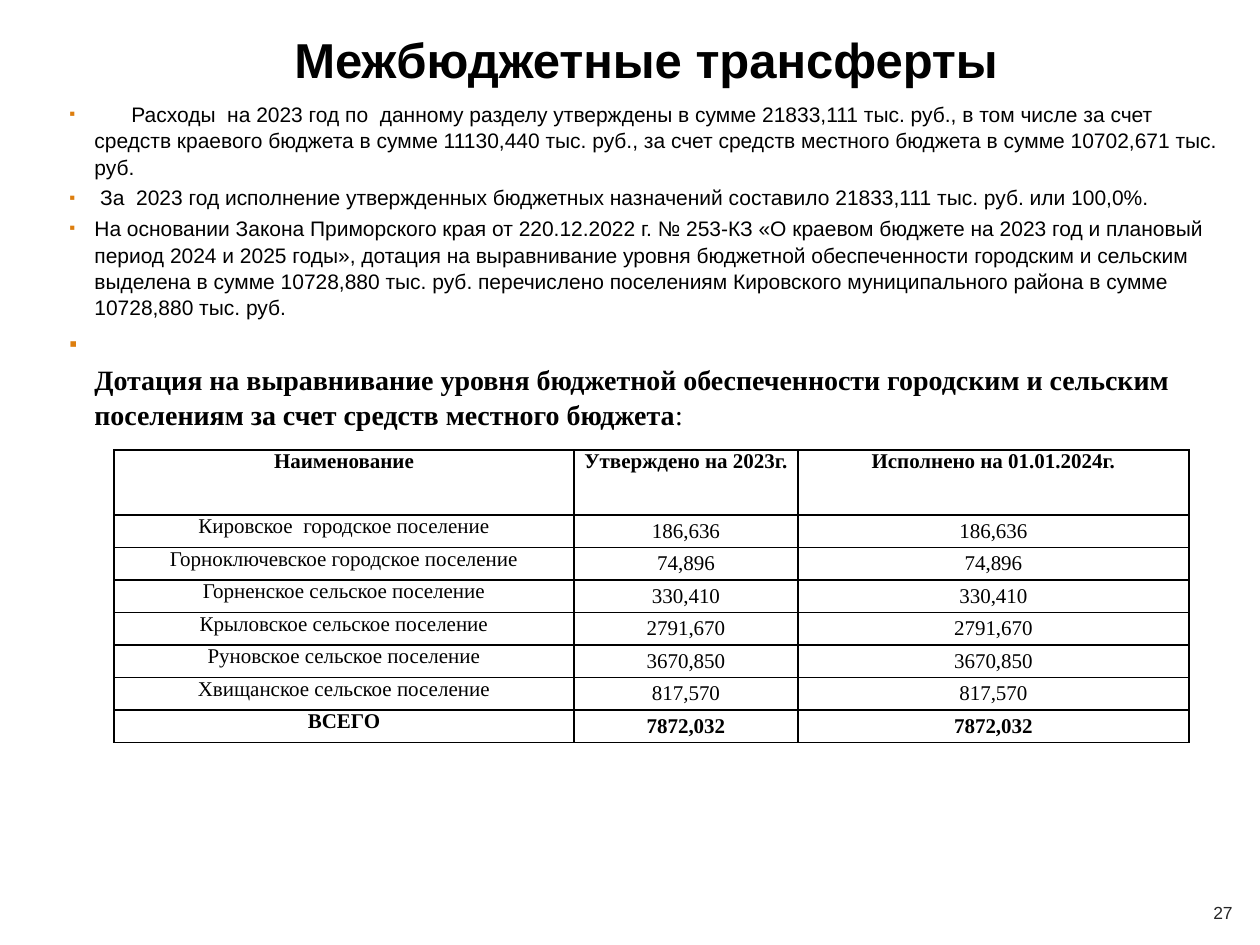
"""Build the slide on inter-budget transfers with its table of settlement subsidies."""
from typing import NamedTuple

from lxml.etree import SubElement
from pptx import Presentation
from pptx.dml.color import RGBColor
from pptx.enum.text import MSO_ANCHOR, PP_ALIGN
from pptx.oxml.ns import qn
from pptx.util import Emu, Pt

EMU_PER_PX = 914400 / 126
COLORS = {"text": "000000", "bullet": "DD7E0E", "number": "262626", "paper": "FFFFFF"}
SANS, SERIF = "Arial", "Times New Roman"


class Box(NamedTuple):
    left: int
    top: int
    width: int
    height: int


class Style(NamedTuple):
    size: float
    font: str
    bold: bool = False
    color: str = "text"


class Span(NamedTuple):
    text: str
    style: Style


class Item(NamedTuple):
    spans: list[Span]
    first_tab: int = 0
    break_before: bool = False


class Row(NamedTuple):
    name: str
    approved: str
    executed: str


TITLE = Style(28, SANS, True)
BODY = Style(12, SANS)
SUBHEAD = Style(16, SERIF, True)
CELL = Style(12, SERIF)
CELL_BOLD = Style(12, SERIF, True)
NUMBER = Style(10, SANS, color="number")

ITEMS = [
    Item([Span("\tРасходы  на 2023 год по  данному разделу утверждены в сумме 21833,111 тыс. руб., "
               "в том числе за счет средств краевого бюджета в сумме 11130,440 тыс. руб., "
               "за счет средств местного бюджета в сумме 10702,671 тыс. руб.", BODY)], first_tab=62),
    Item([Span(" За  2023 год исполнение утвержденных бюджетных назначений составило "
               "21833,111 тыс. руб. или 100,0%.", BODY)]),
    Item([Span("На основании Закона Приморского края от 220.12.2022 г. № 253-КЗ «О краевом бюджете "
               "на 2023 год и плановый период 2024 и 2025 годы», дотация на выравнивание уровня "
               "бюджетной обеспеченности городским и сельским выделена в сумме 10728,880 тыс. руб. "
               "перечислено поселениям Кировского муниципального района в сумме "
               "10728,880 тыс. руб.", BODY)]),
    Item([Span("Дотация на выравнивание уровня бюджетной обеспеченности городским и сельским "
               "поселениям за счет средств местного бюджета", SUBHEAD),
          Span(":", SUBHEAD._replace(bold=False))], break_before=True),
]
HEADER = Row("Наименование", "Утверждено на 2023г.", "Исполнено на 01.01.2024г.")
SETTLEMENTS = [
    Row("Кировское  городское поселение", "186,636", "186,636"),
    Row("Горноключевское городское поселение", "74,896", "74,896"),
    Row("Горненское сельское поселение", "330,410", "330,410"),
    Row("Крыловское сельское поселение", "2791,670", "2791,670"),
    Row("Руновское сельское поселение", "3670,850", "3670,850"),
    Row("Хвищанское сельское поселение", "817,570", "817,570"),
]
TOTAL = Row("ВСЕГО", "7872,032", "7872,032")


def px(length: int) -> Emu:
    """Turn slide pixels into EMU."""
    return Emu(round(length * EMU_PER_PX))


def add_span(paragraph, span: Span) -> None:
    """Append one styled run."""
    run = paragraph.add_run()
    run.text = span.text
    run.font.size = Pt(span.style.size)
    run.font.name = span.style.font
    run.font.bold = span.style.bold
    run.font.color.rgb = RGBColor.from_string(COLORS[span.style.color])


def add_frame(slide, box: Box, anchor: MSO_ANCHOR):
    """Add a wrapping text box and return its text frame."""
    frame = slide.shapes.add_textbox(*map(px, box)).text_frame
    frame.word_wrap = True
    frame.vertical_anchor = anchor
    return frame


def add_label(slide, box: Box, span: Span) -> None:
    """Add one centred line of text."""
    paragraph = add_frame(slide, box, MSO_ANCHOR.MIDDLE).paragraphs[0]
    paragraph.alignment = PP_ALIGN.CENTER
    add_span(paragraph, span)


def set_bullet(paragraph, first_tab: int) -> None:
    """Give a paragraph a hanging square bullet and an optional tab stop."""
    properties = paragraph._p.get_or_add_pPr()
    properties.set("marL", str(px(25)))
    properties.set("indent", str(-px(25)))
    color = SubElement(properties, qn("a:buClr"))
    SubElement(color, qn("a:srgbClr"), val=COLORS["bullet"])
    SubElement(properties, qn("a:buSzPct"), val="80000")
    SubElement(properties, qn("a:buFont"), typeface=SANS)
    SubElement(properties, qn("a:buChar"), char="▪")
    if first_tab:
        tabs = SubElement(properties, qn("a:tabLst"))
        SubElement(tabs, qn("a:tab"), pos=str(px(first_tab)), algn="l")


def add_items(slide, box: Box, items: list[Item]) -> None:
    """Add the bulleted body text."""
    frame = add_frame(slide, box, MSO_ANCHOR.TOP)
    for index, item in enumerate(items):
        paragraph = frame.add_paragraph() if index else frame.paragraphs[0]
        set_bullet(paragraph, item.first_tab)
        size = item.spans[0].style.size
        paragraph.line_spacing = 1.05
        if index:
            paragraph.space_before = Pt(size * 0.2)
        if item.break_before:
            line_break = SubElement(paragraph._p, qn("a:br"))
            SubElement(line_break, qn("a:rPr"), sz=str(size * 100))
        for span in item.spans:
            add_span(paragraph, span)


def set_borders(cell) -> None:
    """Draw a thin line on all four sides of a cell."""
    properties = cell._tc.get_or_add_tcPr()
    for index, side in enumerate(("lnL", "lnR", "lnT", "lnB")):
        line = properties.makeelement(qn(f"a:{side}"), {"w": str(Pt(1))})
        fill = SubElement(line, qn("a:solidFill"))
        SubElement(fill, qn("a:srgbClr"), val=COLORS["text"])
        properties.insert(index, line)


def fill_cell(cell, span: Span, anchor: MSO_ANCHOR) -> None:
    """Write and format one table cell."""
    cell.margin_left = cell.margin_right = px(9)
    cell.margin_top = cell.margin_bottom = 0
    cell.vertical_anchor = anchor
    cell.fill.solid()
    cell.fill.fore_color.rgb = RGBColor.from_string(COLORS["paper"])
    set_borders(cell)
    paragraph = cell.text_frame.paragraphs[0]
    paragraph.alignment = PP_ALIGN.CENTER
    add_span(paragraph, span)


def add_subsidies(slide, box: Box, widths: list[int], header_height: int) -> None:
    """Add the subsidy table with equal rows below its header."""
    rows = [HEADER, *SETTLEMENTS, TOTAL]
    table = slide.shapes.add_table(len(rows), len(widths), *map(px, box)).table
    for column, width in zip(table.columns, widths):
        column.width = px(width)
    row_height = px(box.height - header_height) // (len(rows) - 1)
    for row_index, row in enumerate(rows):
        table.rows[row_index].height = row_height if row_index else px(header_height)
        style = CELL_BOLD if row in (HEADER, TOTAL) else CELL
        for column_index, text in enumerate(row):
            anchor = MSO_ANCHOR.MIDDLE if row_index and column_index else MSO_ANCHOR.TOP
            fill_cell(table.cell(row_index, column_index), Span(text, style), anchor)


def main() -> None:
    """Build and save the slide."""
    deck = Presentation()
    deck.slide_width, deck.slide_height = px(1260), px(945)
    slide = deck.slides.add_slide(deck.slide_layouts[6])
    add_label(slide, Box(63, 23, 1166, 72), Span("Межбюджетные трансферты", TITLE))
    add_items(slide, Box(57, 94, 1176, 433), ITEMS)
    add_label(slide, Box(1191, 888, 64, 50), Span("27", NUMBER))
    add_subsidies(slide, Box(114, 450, 1075, 293), [460, 224, 391], 65)
    deck.save("out.pptx")


if __name__ == "__main__":
    main()
